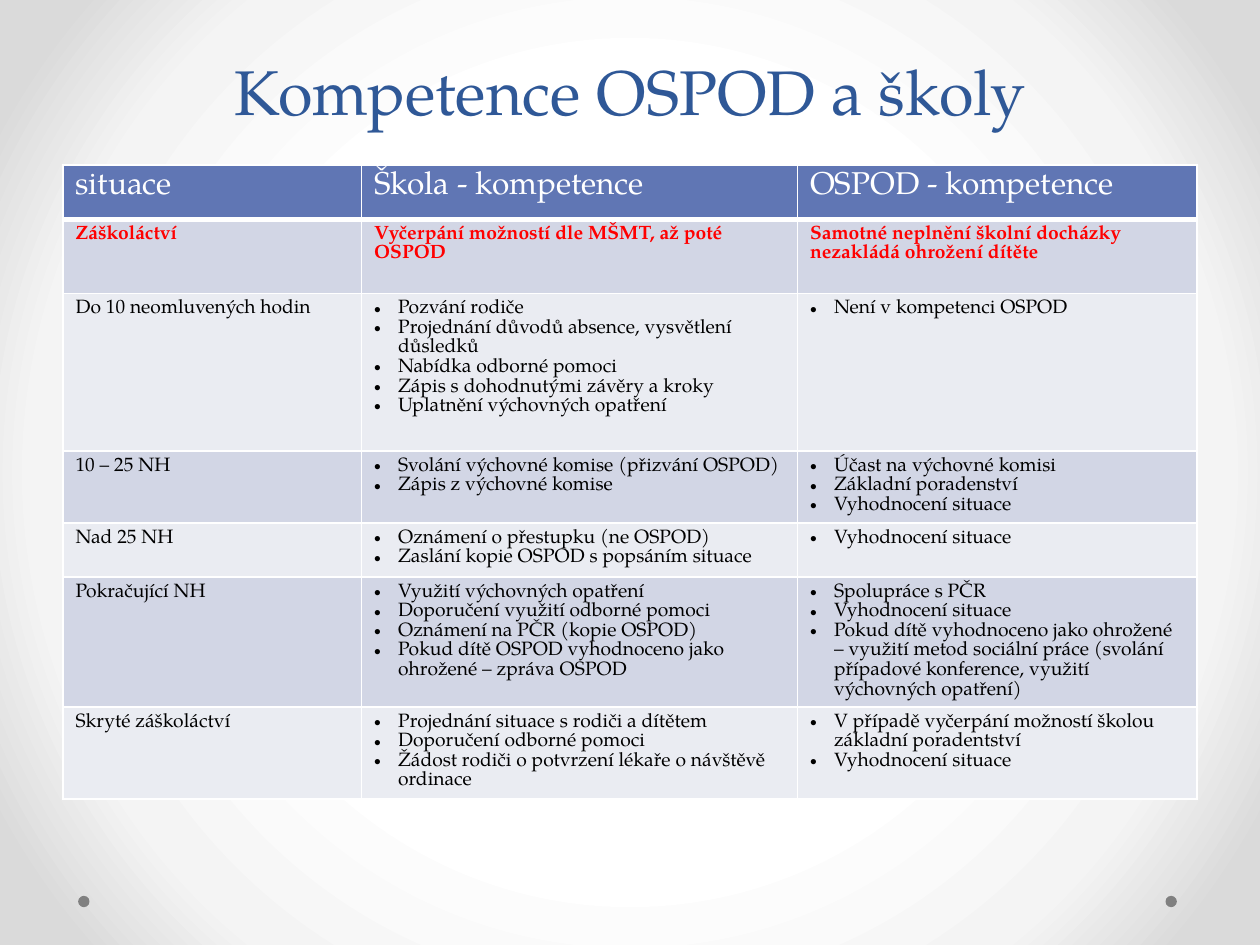
from pptx import Presentation
from pptx.dml.color import RGBColor
from pptx.enum.shapes import MSO_SHAPE
from pptx.enum.text import MSO_ANCHOR, PP_ALIGN
from pptx.oxml import parse_xml
from pptx.oxml.ns import nsdecls, qn
from pptx.util import Inches, Pt

FONT = "TeX Gyre Pagella"
COLORS = {
    "title": "2F5897", "head": "6076B4", "odd": "D2D6E5", "even": "EAECF2",
    "line": "FFFFFF", "text": "000000", "alert": "FF0000", "dot": "808080",
}
GLOW = [(50, "FFFFFF"), (76, "F4F4F4"), (92, "DADADA")]
COLS = [2.37, 3.46, 3.17]
ROWS = [0.43, 0.59, 1.25, 0.57, 0.43, 1.03, 0.73]

# Plain strings are single paragraphs, lists are bulleted
DATA = [
    ["situace", "Škola - kompetence", "OSPOD - kompetence"],
    ["Záškoláctví",
     "Vyčerpání možností dle MŠMT, až poté OSPOD",
     "Samotné neplnění školní docházky nezakládá ohrožení dítěte"],
    ["Do 10 neomluvených hodin",
     ["Pozvání rodiče",
      "Projednání důvodů absence, vysvětlení důsledků",
      "Nabídka odborné pomoci",
      "Zápis s dohodnutými závěry a kroky",
      "Uplatnění výchovných opatření"],
     ["Není v kompetenci OSPOD"]],
    ["10 – 25 NH",
     ["Svolání výchovné komise (přizvání OSPOD)",
      "Zápis z výchovné komise"],
     ["Účast na výchovné komisi",
      "Základní poradenství",
      "Vyhodnocení situace"]],
    ["Nad 25 NH",
     ["Oznámení o přestupku (ne OSPOD)",
      "Zaslání kopie OSPOD s popsáním situace"],
     ["Vyhodnocení situace"]],
    ["Pokračující NH",
     ["Využití výchovných opatření",
      "Doporučení využití odborné pomoci",
      "Oznámení na PČR (kopie OSPOD)",
      "Pokud dítě OSPOD vyhodnoceno jako ohrožené – zpráva OSPOD"],
     ["Spolupráce s PČR",
      "Vyhodnocení situace",
      "Pokud dítě vyhodnoceno jako ohrožené – využití metod sociální práce "
      "(svolání případové konference, využití výchovných opatření)"]],
    ["Skryté záškoláctví",
     ["Projednání situace s rodiči a dítětem",
      "Doporučení odborné pomoci",
      "Žádost rodiči o potvrzení lékaře o návštěvě ordinace"],
     ["V případě vyčerpání možností školou základní poradentství",
      "Vyhodnocení situace"]],
]


class Deck:
    def __init__(self, font, colors):
        self.font = font
        self.colors = colors
        self.prs = Presentation()
        self.prs.slide_width = Inches(10)
        self.prs.slide_height = Inches(7.5)
        self.slide = self.prs.slides.add_slide(self.prs.slide_layouts[5])

    def color(self, name):
        return RGBColor.from_string(self.colors[name])

    def glow(self, stops):
        self.slide.background.fill.solid()
        back = self.slide.element.find(".//" + qn("p:bgPr"))
        marks = "".join(
            f'<a:gs pos="{pos * 1000}"><a:srgbClr val="{tone}"/></a:gs>'
            for pos, tone in stops)
        back.replace(back[0], parse_xml(
            f'<a:gradFill {nsdecls("a")} rotWithShape="1"><a:gsLst>{marks}</a:gsLst>'
            '<a:path path="circle"><a:fillToRect l="50000" t="50000" '
            'r="50000" b="50000"/></a:path></a:gradFill>'))

    def run(self, para, text, size, color, bold=False):
        run = para.add_run()
        run.text = text
        run.font.name = self.font
        run.font.size = Pt(size)
        run.font.bold = bold
        run.font.color.rgb = self.color(color)

    def title(self, text, left, top, width, height):
        box = self.slide.shapes.title
        box.left, box.top = Inches(left), Inches(top)
        box.width, box.height = Inches(width), Inches(height)
        box.text_frame.vertical_anchor = MSO_ANCHOR.BOTTOM
        para = box.text_frame.paragraphs[0]
        para.alignment = PP_ALIGN.CENTER
        para.line_spacing = Pt(58)
        self.run(para, text, 36, "title")

    def dot(self, left, top, size):
        dot = self.slide.shapes.add_shape(
            MSO_SHAPE.OVAL, Inches(left), Inches(top), Inches(size), Inches(size))
        dot.shadow.inherit = False
        dot.fill.solid()
        dot.fill.fore_color.rgb = self.color("dot")
        dot.line.fill.background()

    def bullet(self, para):
        props = para._p.get_or_add_pPr()
        props.set("marL", str(Inches(0.19)))
        props.set("indent", str(-Inches(0.19)))
        props.append(parse_xml(f'<a:buFont {nsdecls("a")} typeface="Arial"/>'))
        props.append(parse_xml(f'<a:buChar {nsdecls("a")} char="•"/>'))

    def border(self, cell, base):
        props = cell._tc.get_or_add_tcPr()
        for spot, side in enumerate("LRTB"):
            width = Pt(base if side == "B" else 1)
            props.insert(spot, parse_xml(
                f'<a:ln{side} {nsdecls("a")} w="{width}"><a:solidFill>'
                f'<a:srgbClr val="{self.colors["line"]}"/></a:solidFill></a:ln{side}>'))

    def cell(self, cell, text, fill, size, color, bold, base):
        cell.fill.solid()
        cell.fill.fore_color.rgb = self.color(fill)
        self.border(cell, base)
        frame = cell.text_frame
        listed = isinstance(text, list)
        for i, item in enumerate(text if listed else [text]):
            para = frame.add_paragraph() if i else frame.paragraphs[0]
            if listed:
                self.bullet(para)
            self.run(para, item, size, color, bold)

    def table(self, data, left, top, cols, rows):
        grid = self.slide.shapes.add_table(
            len(rows), len(cols), Inches(left), Inches(top),
            Inches(sum(cols)), Inches(sum(rows))).table
        for col, width in zip(grid.columns, cols):
            col.width = Inches(width)
        for r, (line, height) in enumerate(zip(data, rows)):
            grid.rows[r].height = Inches(height)
            if r == 0:
                look = ("head", 18, "line", False, 3)
            else:
                fill = "odd" if r % 2 else "even"
                look = (fill, 11, "alert" if r == 1 else "text", r == 1, 1)
            for c, text in enumerate(line):
                self.cell(grid.cell(r, c), text, *look)


def main():
    deck = Deck(FONT, COLORS)
    deck.glow(GLOW)
    # Corner dots
    for left in (9.25, 0.62):
        deck.dot(left, 7.11, 0.09)
    # Title and table
    deck.title("Kompetence OSPOD a školy", 0.5, 0, 9, 1.07)
    deck.table(DATA, 0.5, 1.31, COLS, ROWS)
    deck.prs.save("out.pptx")


if __name__ == "__main__":
    main()
